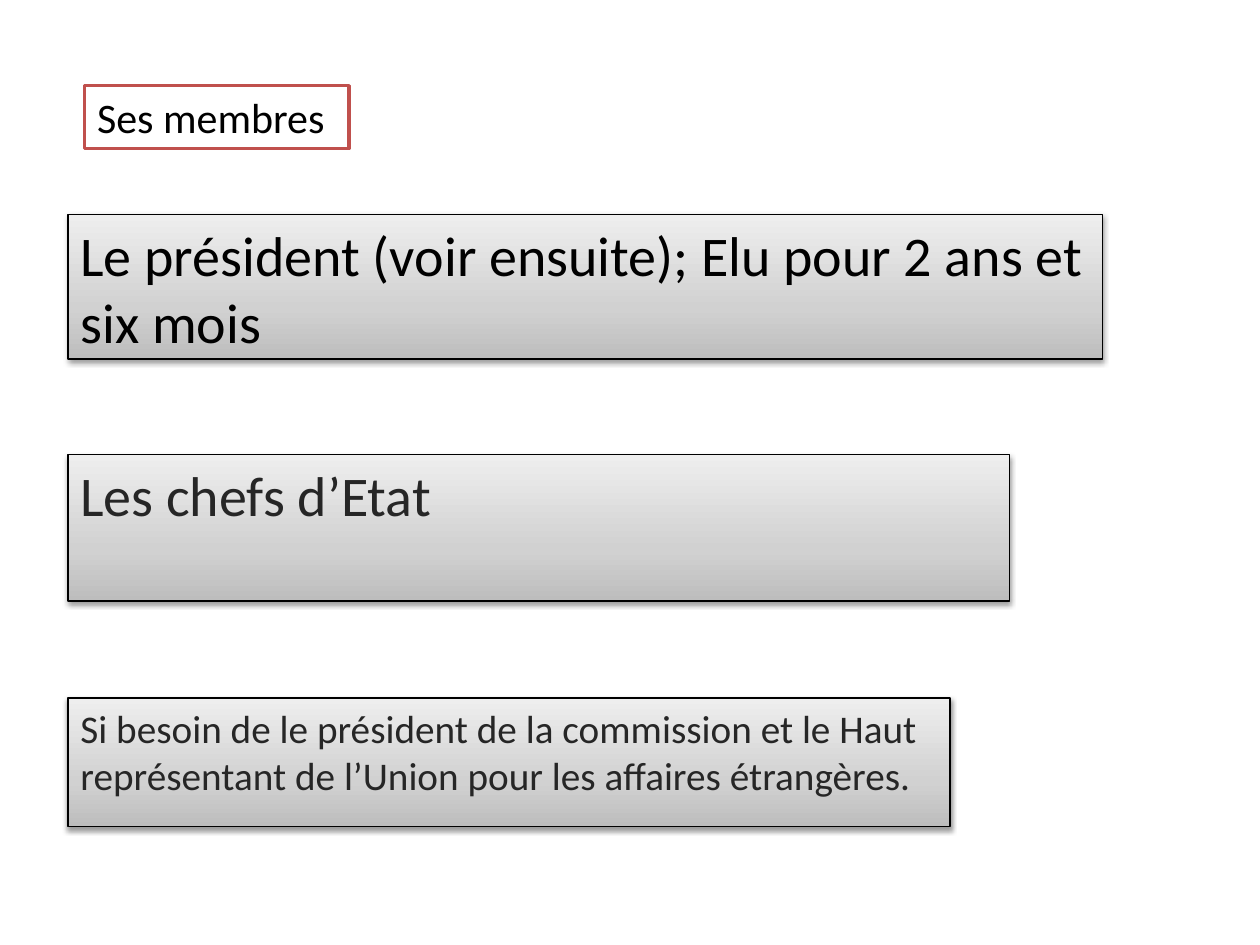
import copy
import dataclasses

import lxml.etree
import pptx
import pptx.dml.color
import pptx.enum.shapes
import pptx.enum.text
import pptx.oxml.ns
import pptx.util

Inches = pptx.util.Inches
Pt = pptx.util.Pt
RGB = pptx.dml.color.RGBColor.from_string
qn = pptx.oxml.ns.qn


@dataclasses.dataclass(frozen=True)
class Theme:
    font: str = "Calibri"
    black: str = "000000"
    dark_grey: str = "262626"
    white: str = "FFFFFF"
    red: str = "C0504D"
    gradient: tuple = ((0, "BDBDBD"), (0.35, "D1D1D1"), (1, "EEEEEE"))
    title_size: float = 24
    large_size: float = 32
    small_size: float = 22.4


class SlideBuilder:
    def __init__(self, deck, theme):
        self.theme = theme
        self.slide = deck.slides.add_slide(deck.slide_layouts[5])

    def set_text(self, shape, text, size, color, wrap=True):
        frame = shape.text_frame
        frame.text = text
        frame.auto_size = pptx.enum.text.MSO_AUTO_SIZE.NONE
        frame.word_wrap = wrap
        frame.vertical_anchor = pptx.enum.text.MSO_ANCHOR.TOP
        para = frame.paragraphs[0]
        para.alignment = pptx.enum.text.PP_ALIGN.LEFT
        font = para.runs[0].font
        font.name = self.theme.font
        font.size = Pt(size)
        font.color.rgb = RGB(color)

    def title(self, text, left, top, width, height):
        box = self.slide.shapes.title
        box.left, box.top = Inches(left), Inches(top)
        box.width, box.height = Inches(width), Inches(height)
        box.fill.solid()
        box.fill.fore_color.rgb = RGB(self.theme.white)
        box.line.color.rgb = RGB(self.theme.red)
        box.line.width = Pt(2)
        self.set_text(box, text, self.theme.title_size, self.theme.black, wrap=False)

    def panel(self, text, left, top, width, height, size, color):
        box = self.slide.shapes.add_shape(
            pptx.enum.shapes.MSO_SHAPE.RECTANGLE,
            Inches(left), Inches(top), Inches(width), Inches(height))
        self.fill_gradient(box)
        box.line.color.rgb = RGB(self.theme.black)
        box.line.width = Pt(0.75)
        self.add_shadow(box)
        self.set_text(box, text, size, color)

    def fill_gradient(self, box):
        box.fill.gradient()
        box.fill.gradient_angle = 90
        # The default gradient has two stops; add a third
        stop_list = box._element.spPr.find(".//" + qn("a:gsLst"))
        stop_list.append(copy.deepcopy(stop_list[-1]))
        for stop, (position, color) in zip(box.fill.gradient_stops, self.theme.gradient):
            stop.position = position
            stop.color.rgb = RGB(color)

    def add_shadow(self, box):
        box.shadow.inherit = False
        effects = box._element.spPr.find(qn("a:effectLst"))
        shadow = lxml.etree.SubElement(
            effects, qn("a:outerShdw"), blurRad=str(Pt(3.1)), dist=str(Pt(1.6)),
            dir="5400000", rotWithShape="0")
        color = lxml.etree.SubElement(shadow, qn("a:srgbClr"), val=self.theme.black)
        lxml.etree.SubElement(color, qn("a:alpha"), val="38000")


def main():
    deck = pptx.Presentation()
    deck.slide_width, deck.slide_height = Inches(10), Inches(7.5)
    theme = Theme()
    page = SlideBuilder(deck, theme)

    # Heading
    page.title("Ses membres", 0.67, 0.68, 2.1, 0.5)

    # Members, one panel each: text, top, width, height, size, colour
    members = (
        ("Le président (voir ensuite); Elu pour 2 ans et six mois",
         1.7, 8.21, 1.15, theme.large_size, theme.black),
        ("Les chefs d’Etat",
         3.61, 7.47, 1.16, theme.large_size, theme.dark_grey),
        ("Si besoin de le président de la commission et le Haut "
         "représentant de l’Union pour les affaires étrangères.",
         5.54, 7, 1.02, theme.small_size, theme.dark_grey),
    )
    for text, top, width, height, size, color in members:
        page.panel(text, 0.54, top, width, height, size, color)

    deck.save("out.pptx")


if __name__ == "__main__":
    main()
